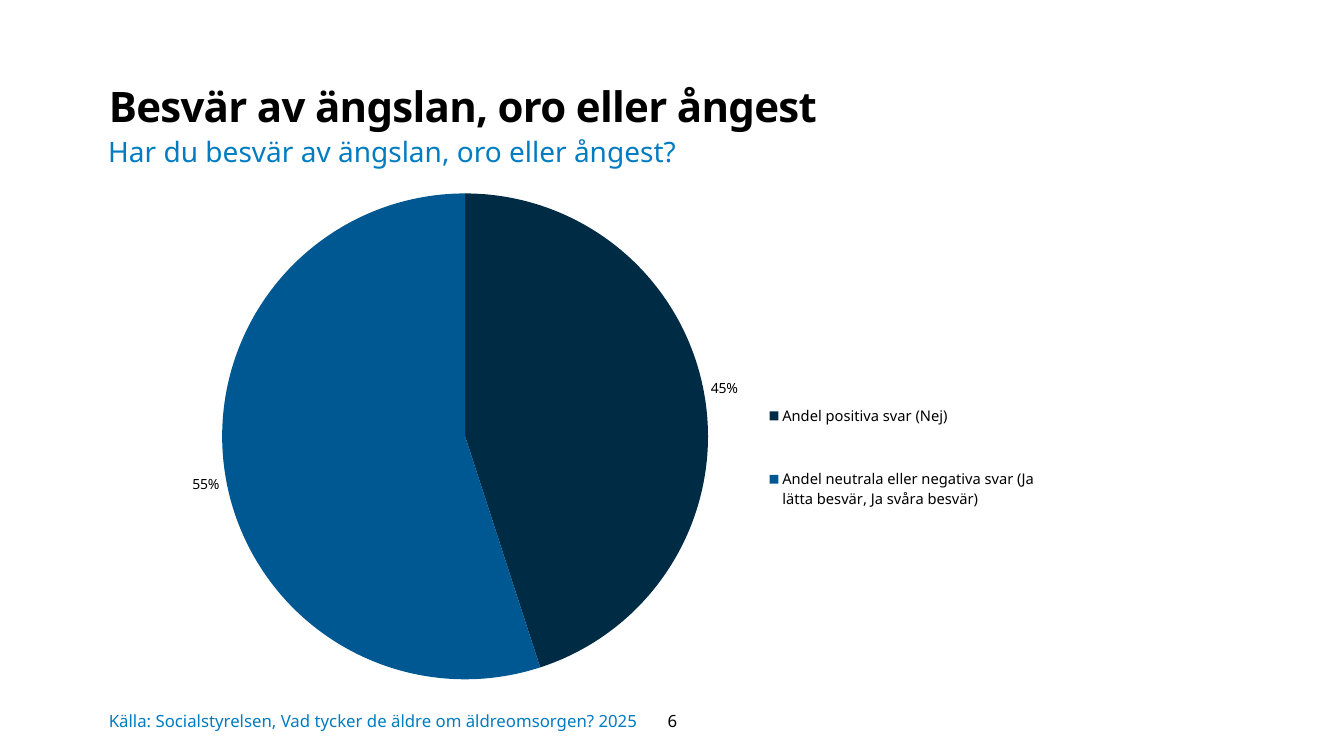
"""Build a slide with a pie chart of answers about anxiety and worry."""
from dataclasses import dataclass

from lxml import etree
from pptx import Presentation
from pptx.chart.chart import Chart
from pptx.chart.data import CategoryChartData
from pptx.dml.color import RGBColor
from pptx.dml.fill import FillFormat
from pptx.enum.chart import XL_CHART_TYPE, XL_LABEL_POSITION, XL_LEGEND_POSITION
from pptx.enum.text import MSO_ANCHOR, PP_ALIGN
from pptx.oxml.ns import qn
from pptx.slide import Slide
from pptx.text.text import Font
from pptx.util import Pt

PIE = XL_CHART_TYPE.PIE
OUTSIDE_END = XL_LABEL_POSITION.OUTSIDE_END
RIGHT = XL_LEGEND_POSITION.RIGHT
TOP, MIDDLE = MSO_ANCHOR.TOP, MSO_ANCHOR.MIDDLE
LEFT, CENTER = PP_ALIGN.LEFT, PP_ALIGN.CENTER

FONT = "Noto Sans"
BLACK, BLUE = "000000", "017CC1"
Frame = tuple[float, float, float, float]


@dataclass(frozen=True)
class Label:
    """One line of text with its place and look."""
    text: str
    frame: Frame
    size: float
    color: str
    margins: Frame = (7.2, 3.6, 7.2, 3.6)
    anchor: MSO_ANCHOR = TOP
    align: PP_ALIGN = LEFT
    bold: bool = False
    line_spacing: float = 1.0
    tracking: float = 0


@dataclass(frozen=True)
class Answer:
    """One slice of the pie."""
    name: str
    share: int
    color: str


LABELS = (
    Label("Besvär av ängslan, oro eller ångest", (77.76, 54, 701.28, 38.88), 30, BLACK,
          margins=(0, 0, 7.2, 3.6), bold=True, line_spacing=1.1, tracking=-0.5),
    Label("Har du besvär av ängslan, oro eller ångest?", (70.2, 92.88, 632.16, 31.68),
          20, BLUE),
    Label("Källa: Socialstyrelsen, Vad tycker de äldre om äldreomsorgen? 2025",
          (77.76, 498.96, 632.88, 31.68), 12, BLUE, margins=(0, 0, 0, 0), anchor=MIDDLE),
    Label("6", (443.52, 500.4, 73.44, 28.8), 12, BLACK, anchor=MIDDLE, align=CENTER),
)
ANSWERS = (
    Answer("Andel positiva svar (Nej)", 45, "002B45"),
    Answer("Andel neutrala eller negativa svar (Ja lätta besvär, Ja svåra besvär)",
           55, "005892"),
)
CHART_FRAME = (100.8, 123.12, 701.28, 377.28)
PIE_LAYOUT = (0.08, 0.04, 0.5, 0.92)
LEGEND_LAYOUT = (0.63, 0.36, 0.29, 0.36)


def rgb(color: str) -> RGBColor:
    """Turn a hex string into a colour."""
    return RGBColor.from_string(color)


def paint(fill: FillFormat, color: str) -> None:
    """Give a fill one solid colour."""
    fill.solid()
    fill.fore_color.rgb = rgb(color)


def set_font(font: Font, size: float, color: str, bold: bool = False) -> None:
    """Set typeface, size, colour and weight."""
    font.name = FONT
    font.size = Pt(size)
    font.bold = bold
    font.color.rgb = rgb(color)


def add_label(page: Slide, label: Label) -> None:
    """Draw one label as a text box."""
    frame = page.shapes.add_textbox(*map(Pt, label.frame)).text_frame
    frame.word_wrap = True
    frame.vertical_anchor = label.anchor
    (frame.margin_left, frame.margin_top,
     frame.margin_right, frame.margin_bottom) = map(Pt, label.margins)
    para = frame.paragraphs[0]
    para.alignment = label.align
    para.line_spacing = label.line_spacing
    span = para.add_run()
    span.text = label.text
    set_font(para.font, label.size, label.color, label.bold)
    if label.tracking:
        span.font._element.set("spc", str(round(label.tracking * 100)))


def set_layout(parent: etree._Element, before: str, place: Frame, inner: bool = False) -> None:
    """Place a chart part by fractions of the chart's size."""
    for old in parent.findall(qn("c:layout")):
        parent.remove(old)
    layout = etree.Element(qn("c:layout"))
    manual = etree.SubElement(layout, qn("c:manualLayout"))
    settings = [("layoutTarget", "inner")] if inner else []
    settings += [("xMode", "edge"), ("yMode", "edge")]
    settings += [(key, str(value)) for key, value in zip("xywh", place)]
    for key, value in settings:
        etree.SubElement(manual, qn(f"c:{key}")).set("val", value)
    parent.find(qn(before)).addprevious(layout)


def add_legend(chart: Chart) -> None:
    """Show the legend to the right of the pie."""
    chart.has_legend = True
    legend = chart.legend
    legend.position = RIGHT
    legend.include_in_layout = False
    set_font(legend.font, 10.5, BLACK)
    set_layout(legend._element, "c:overlay", LEGEND_LAYOUT)


def add_pie(page: Slide) -> None:
    """Draw the pie chart with percentages and legend."""
    data = CategoryChartData()
    data.categories = [answer.name for answer in ANSWERS]
    data.add_series("Series 1", [answer.share for answer in ANSWERS])
    chart = page.shapes.add_chart(PIE, *map(Pt, CHART_FRAME), data).chart
    chart.has_title = False
    set_font(chart.font, 10, BLACK)
    plot = chart.plots[0]
    plot.vary_by_categories = True
    set_layout(plot._element.getparent(), "c:pieChart", PIE_LAYOUT, inner=True)
    series = plot.series[0]
    for index, answer in enumerate(ANSWERS):
        paint(series.points[index].format.fill, answer.color)
    labels = series.data_labels
    labels.show_percentage = True
    labels.show_value = False
    labels.number_format = "0%"
    labels.number_format_is_linked = False
    labels.position = OUTSIDE_END
    set_font(labels.font, 10, BLACK)
    add_legend(chart)


def main() -> None:
    """Build and save the deck."""
    deck = Presentation()
    deck.slide_width, deck.slide_height = Pt(960), Pt(540)
    page = deck.slides.add_slide(deck.slide_layouts[6])
    paint(page.background.fill, "FFFFFF")
    add_pie(page)
    for label in LABELS:
        add_label(page, label)
    deck.save("out.pptx")


if __name__ == "__main__":
    main()
